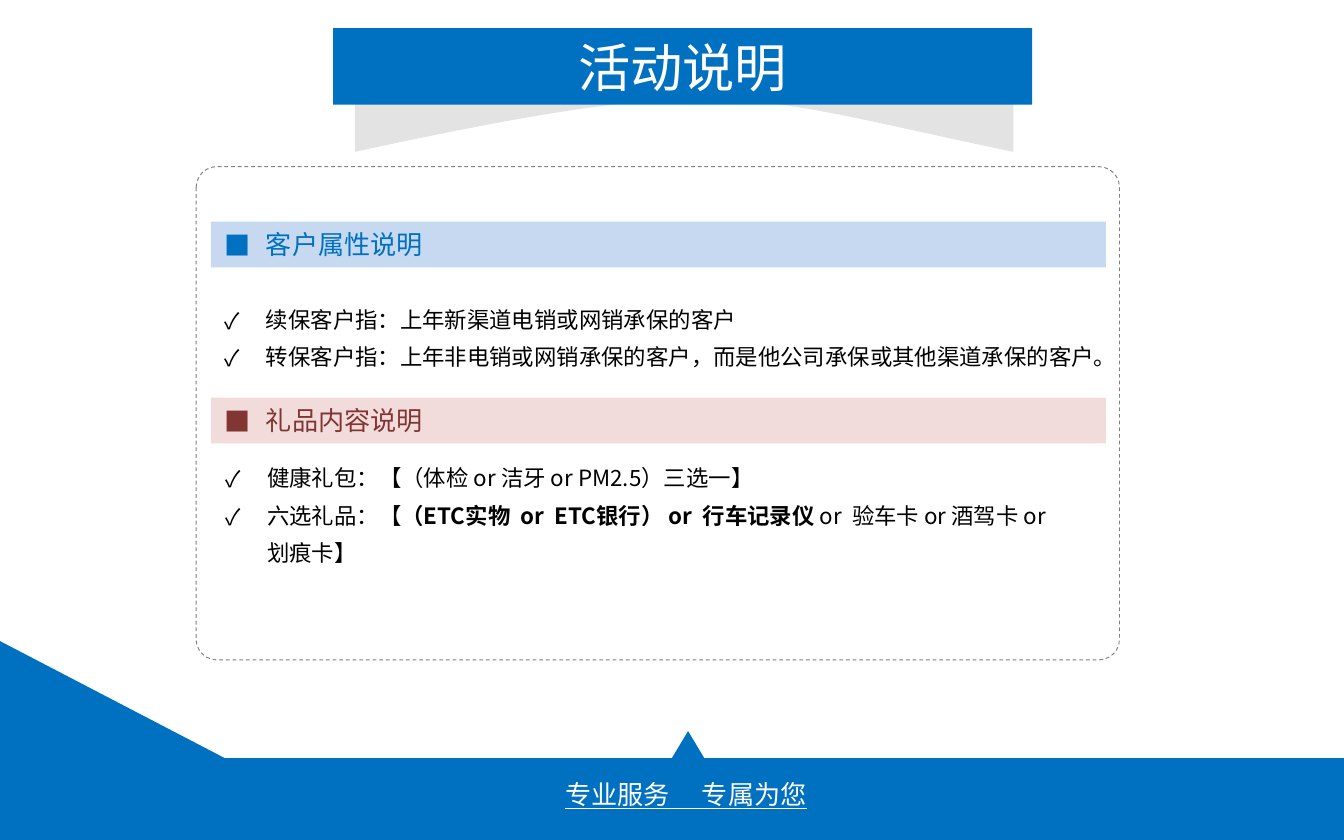
from lxml import etree
from pptx import Presentation
from pptx.dml.color import RGBColor
from pptx.enum.dml import MSO_LINE
from pptx.enum.shapes import MSO_SHAPE
from pptx.enum.text import MSO_ANCHOR, PP_ALIGN
from pptx.oxml.ns import qn
from pptx.util import Pt

PX = 9144  # one px is 0.01 inch
RECTANGLE = MSO_SHAPE.RECTANGLE
ROUNDED = MSO_SHAPE.ROUNDED_RECTANGLE
TRIANGLE = MSO_SHAPE.ISOSCELES_TRIANGLE
DASH = MSO_LINE.DASH
TOP, MIDDLE = MSO_ANCHOR.TOP, MSO_ANCHOR.MIDDLE
LEFT, CENTER = PP_ALIGN.LEFT, PP_ALIGN.CENTER
CJK, LATIN = "Noto Sans CJK SC", "Roboto"
BLUE, WHITE, BLACK = "0070C0", "FFFFFF", "000000"


def px(value):
    return round(value * PX)


def color(hex_value):
    return RGBColor.from_string(hex_value)


def add_shape(slide, kind, left, top, width, height, fill=None):
    shape = slide.shapes.add_shape(kind, px(left), px(top), px(width), px(height))
    shape.shadow.inherit = False
    shape.line.fill.background()
    if fill:
        shape.fill.solid()
        shape.fill.fore_color.rgb = color(fill)
    else:
        shape.fill.background()
    return shape


def add_textbox(slide, left, top, width, height):
    return slide.shapes.add_textbox(px(left), px(top), px(width), px(height))


def add_bullet(paragraph, character):
    properties = paragraph._p.get_or_add_pPr()
    properties.set("marL", str(px(31)))
    properties.set("indent", str(px(-31)))
    etree.SubElement(properties, qn("a:buFont")).set("typeface", CJK)
    etree.SubElement(properties, qn("a:buChar")).set("char", character)


def write(shape, paragraphs, size, font, hex_value, align=LEFT, anchor=TOP,
          bullet=None, spacing=None):
    """Each paragraph is a list of (text, bold) runs."""
    frame = shape.text_frame
    frame.word_wrap = True
    frame.vertical_anchor = anchor
    for index, runs in enumerate(paragraphs):
        paragraph = frame.add_paragraph() if index else frame.paragraphs[0]
        paragraph.alignment = align
        if spacing:
            paragraph.line_spacing = Pt(spacing)
        if bullet:
            add_bullet(paragraph, bullet)
        for text, bold in runs:
            run = paragraph.add_run()
            run.text = text
            run.font.size = Pt(size)
            run.font.name = font
            run.font.bold = bold
            run.font.color.rgb = color(hex_value)
            etree.SubElement(run._r.get_or_add_rPr(), qn("a:ea")).set("typeface", CJK)


def bezier(points, steps=40):
    for step in range(1, steps + 1):
        t = step / steps
        weights = ((1 - t) ** 3, 3 * t * (1 - t) ** 2, 3 * t * t * (1 - t), t ** 3)
        yield tuple(px(sum(w * p[axis] for w, p in zip(weights, points)))
                    for axis in (0, 1))


def add_banner(slide, left, top, width, height, title):
    # Curved shade below the banner
    start, upper, lower = left + 16, top + 30, top + 92
    end = start + 490
    curve = [(end, lower), (start + 282, lower - 43), (start + 283, lower - 61),
             (start, lower)]
    builder = slide.shapes.build_freeform(px(start), px(upper))
    builder.add_line_segments(
        [(px(end), px(upper)), (px(end), px(lower)), *bezier(curve)], close=True)
    shade = builder.convert_to_shape()
    shade.shadow.inherit = False
    shade.line.fill.background()
    shade.fill.solid()
    shade.fill.fore_color.rgb = color("DDDDDD")
    shade_color = shade._element.spPr.find(qn("a:solidFill"))[0]
    etree.SubElement(shade_color, qn("a:alpha")).set("val", "80000")

    # Title bar
    bar = add_shape(slide, RECTANGLE, left, top, width, height, BLUE)
    write(bar, [[(title, False)]], 28, CJK, WHITE, CENTER, MIDDLE)


def add_panel(slide, left, top, width, height, sections):
    frame = add_shape(slide, ROUNDED, left, top, width, height)
    frame.adjustments[0] = 0.042
    frame.line.color.rgb = color("808080")
    frame.line.width = Pt(0.5)
    frame.line.dash_style = DASH

    for heading, fill, ink, offset, body_box, items in sections:
        bar = add_shape(slide, RECTANGLE, left + 11, top + offset, 666, 34, fill)
        write(bar, [[(heading, False)]], 14, LATIN, ink, bullet="■")
        x, y, body_width, body_height = body_box
        body = add_textbox(slide, left + x, top + y, body_width, body_height)
        write(body, items, 12, CJK, BLACK, bullet="✓", spacing=20)


def add_footer(slide, left, top, width, height, slogan):
    add_shape(slide, RECTANGLE, left, top, width, height, BLUE)
    # Corner slope and centre pointer
    slope = add_shape(slide, TRIANGLE, left, top - 87, 171, 89, BLUE)
    slope.adjustments[0] = 0
    add_shape(slide, TRIANGLE, left + 500, top - 20, 24, 20, BLUE)
    # Slogan
    box = add_textbox(slide, left + 395, top + 10, 231, 34)
    write(box, [[(slogan, False)]], 14, LATIN, WHITE, CENTER)
    box.text_frame.paragraphs[0].runs[0].font.underline = True


SECTIONS = [
    ("客户属性说明", "C6D9F1", BLUE, 41, (11, 91, 689, 66), [
        [("续保客户指：上年新渠道电销或网销承保的客户", False)],
        [("转保客户指：上年非电销或网销承保的客户，而是他公司承保或其他渠道承保的客户。", False)],
    ]),
    ("礼品内容说明", "F2DCDB", "823634", 172, (12, 209, 650, 94), [
        [("健康礼包：【（体检 or 洁牙 or PM2.5）三选一】", False)],
        [("六选礼品：【", False),
         ("（ETC实物  or  ETC银行） or  行车记录仪 ", True),
         ("or  验车卡 or 酒驾卡 or 划痕卡】", False)],
    ]),
]


def main():
    presentation = Presentation()
    presentation.slide_width, presentation.slide_height = px(1000), px(625)
    slide = presentation.slides.add_slide(presentation.slide_layouts[6])
    add_banner(slide, 248, 21, 520, 57, "活动说明")
    add_panel(slide, 146, 124, 687, 367, SECTIONS)
    add_footer(slide, 0, 564, 1000, 61, "专业服务　 专属为您")
    presentation.save("out.pptx")


if __name__ == "__main__":
    main()
